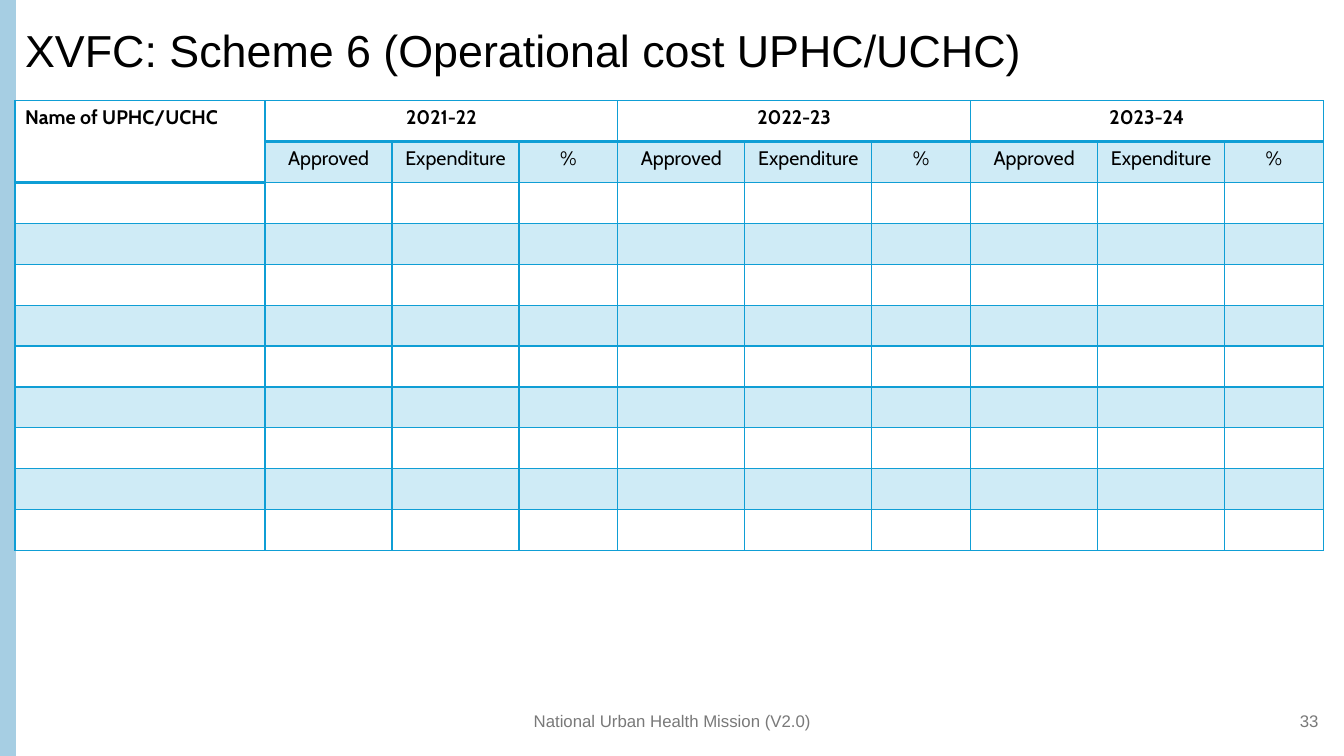
from lxml import etree
from pptx import Presentation
from pptx.dml.color import RGBColor
from pptx.enum.shapes import MSO_SHAPE
from pptx.enum.text import MSO_ANCHOR, PP_ALIGN
from pptx.oxml.ns import qn
from pptx.util import Cm, Pt

RECTANGLE = MSO_SHAPE.RECTANGLE
MIDDLE = MSO_ANCHOR.MIDDLE
LEFT, CENTER, RIGHT = PP_ALIGN.LEFT, PP_ALIGN.CENTER, PP_ALIGN.RIGHT

COLORS = {
    "background": "FFFFFF",
    "side_bar": "A6CEE3",
    "table": "0F9ED5",
    "text": "000000",
    "footer": "797979",
}
TITLE = "XVFC: Scheme 6 (Operational cost UPHC/UCHC)"
YEARS = ["2021-22", "2022-23", "2023-24"]
MEASURES = ["Approved", "Expenditure", "%"]
NAME_WIDTH = 6.3
MEASURE_WIDTHS = [3.2, 3.2, 2.49]
ROW_COUNT = 11


def color(name):
    return RGBColor.from_string(COLORS[name])


def write(frame, text, font, size, color_name, alignment=LEFT, bold=False):
    paragraph = frame.paragraphs[0]
    paragraph.alignment = alignment
    run = paragraph.add_run()
    run.text = text
    run.font.name = font
    run.font.size = Pt(size)
    run.font.bold = bold
    run.font.color.rgb = color(color_name)
    return paragraph


def add_side_bar(slide, left, top, width, height):
    bar = slide.shapes.add_shape(RECTANGLE, Cm(left), Cm(top), Cm(width), Cm(height))
    bar.shadow.inherit = False
    bar.fill.solid()
    bar.fill.fore_color.rgb = color("side_bar")
    bar.line.color.rgb = color("side_bar")
    bar.line.width = Pt(1.5)


def format_title(slide, left, top, width, height):
    title = slide.shapes.title
    title.left, title.top = Cm(left), Cm(top)
    title.width, title.height = Cm(width), Cm(height)
    title.text_frame.vertical_anchor = MIDDLE
    paragraph = write(title.text_frame, TITLE, "Arial", 32, "text")
    paragraph.line_spacing = 0.9


def set_borders(cell, top_width, bottom_width):
    properties = cell._tc.get_or_add_tcPr()
    widths = {"a:lnL": 1, "a:lnR": 1, "a:lnT": top_width, "a:lnB": bottom_width}
    for tag, width in widths.items():
        line = etree.SubElement(properties, qn(tag), w=str(Pt(width)))
        fill = etree.SubElement(line, qn("a:solidFill"))
        etree.SubElement(fill, qn("a:srgbClr"), val=COLORS["table"])


def set_fill(cell, shaded):
    if not shaded:
        cell.fill.background()
        return
    cell.fill.solid()
    cell.fill.fore_color.rgb = color("table")
    tint = cell._tc.tcPr.find(qn("a:solidFill")).find(qn("a:srgbClr"))
    etree.SubElement(tint, qn("a:alpha"), val="20000")


def add_scheme_table(slide, left, top, row_height):
    widths = [NAME_WIDTH] + MEASURE_WIDTHS * len(YEARS)
    frame = slide.shapes.add_table(
        ROW_COUNT, len(widths), Cm(left), Cm(top),
        Cm(sum(widths)), Cm(row_height * ROW_COUNT))
    table = frame.table
    table.first_row = False
    table.horz_banding = False
    for column, width in zip(table.columns, widths):
        column.width = Cm(width)
    for row in table.rows:
        row.height = Cm(row_height)

    for row in range(ROW_COUNT):
        for column in range(len(widths)):
            header_rows = 2 if column == 0 else 1
            cell = table.cell(row, column)
            set_borders(cell, 2 if row == header_rows else 1,
                        2 if row < header_rows else 1)
            set_fill(cell, row % 2 == 1 and row >= header_rows)

    name_cell = table.cell(0, 0)
    name_cell.merge(table.cell(1, 0))
    write(name_cell.text_frame, "Name of UPHC/UCHC", "Cabin", 14, "text", bold=True)
    for group, year in enumerate(YEARS):
        first = 1 + group * len(MEASURES)
        year_cell = table.cell(0, first)
        year_cell.merge(table.cell(0, first + len(MEASURES) - 1))
        write(year_cell.text_frame, year, "Cabin", 14, "text", CENTER, True)
        for offset, measure in enumerate(MEASURES):
            cell = table.cell(1, first + offset)
            write(cell.text_frame, measure, "Cabin", 14, "text", CENTER)


def add_footer_text(slide, left, top, width, height, text, alignment):
    box = slide.shapes.add_textbox(Cm(left), Cm(top), Cm(width), Cm(height))
    box.text_frame.word_wrap = True
    box.text_frame.vertical_anchor = MIDDLE
    write(box.text_frame, text, "Arial", 12, "footer", alignment)


def build_scheme_slide(presentation):
    slide = presentation.slides.add_slide(presentation.slide_layouts[5])
    slide.background.fill.solid()
    slide.background.fill.fore_color.rgb = color("background")
    add_side_bar(slide, 0, 0, 0.38, 19.05)
    format_title(slide, 0.38, 0.38, 33.15, 1.9)
    add_scheme_table(slide, 0.38, 2.54, 1.03)
    add_footer_text(slide, 11.23, 17.65, 11.43, 1.02,
                    "National Urban Health Mission (V2.0)", CENTER)
    add_footer_text(slide, 25.86, 17.65, 7.62, 1.02, "33", RIGHT)


def main():
    presentation = Presentation()
    presentation.slide_width = Cm(33.87)
    presentation.slide_height = Cm(19.05)
    build_scheme_slide(presentation)
    presentation.save("out.pptx")


if __name__ == "__main__":
    main()
